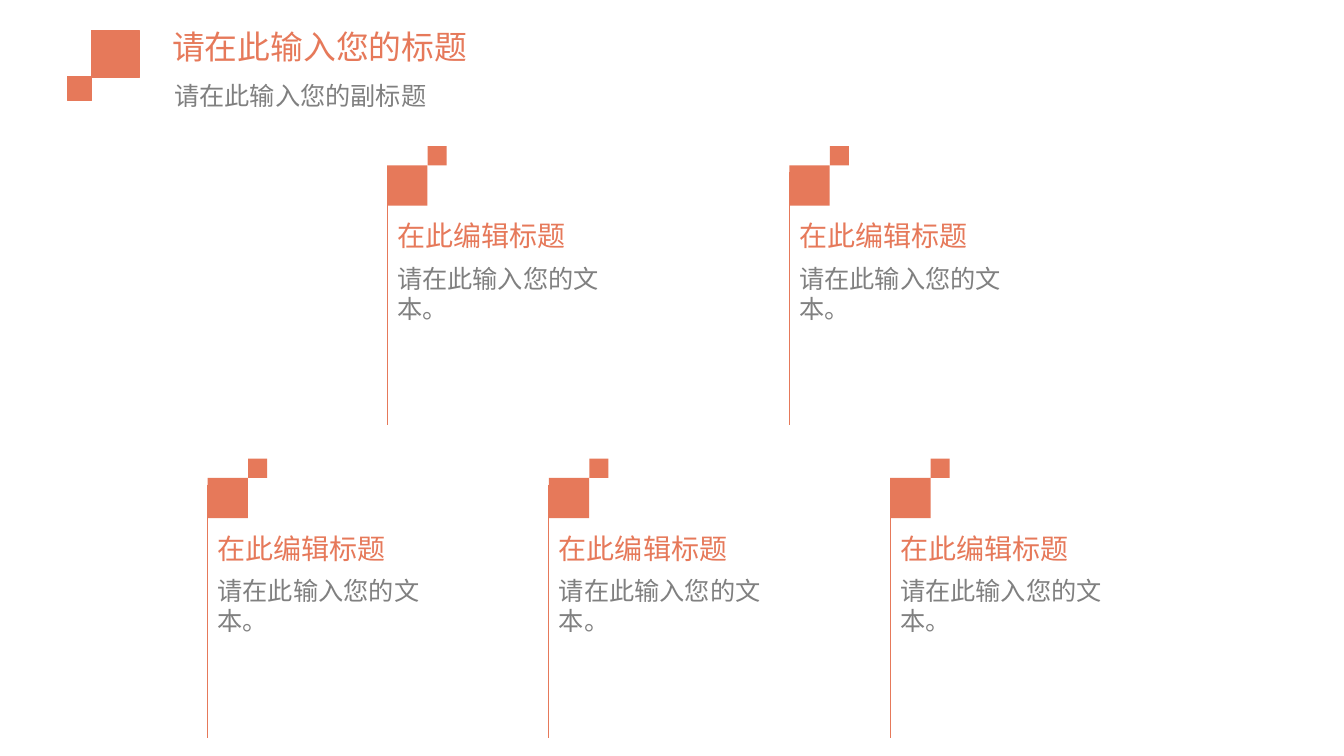
from lxml.etree import SubElement
from pptx import Presentation
from pptx.dml.color import RGBColor
from pptx.enum.shapes import MSO_CONNECTOR, MSO_SHAPE
from pptx.enum.text import MSO_ANCHOR
from pptx.oxml.ns import qn
from pptx.util import Inches, Pt

COLORS = {"accent": "E6795A", "body": "808080", "background": "FFFFFF"}
FONT = "Arial"

# Top-left corner of each row's cards: (top, left positions)
CARD_ROWS = [
    (1.45, [3.84, 7.83]),
    (4.55, [2.06 + 3.385 * column for column in range(3)]),
]


def color(name):
    return RGBColor.from_string(COLORS[name])


def add_square(page, left, top, size, outlined=False):
    square = page.shapes.add_shape(
        MSO_SHAPE.RECTANGLE, Inches(left), Inches(top), Inches(size), Inches(size))
    square.shadow.inherit = False
    square.fill.solid()
    square.fill.fore_color.rgb = color("accent")
    if outlined:
        square.line.color.rgb = color("accent")
        square.line.width = Pt(0.75)
    else:
        square.line.fill.background()


def add_rule(page, left, top, height):
    rule = page.shapes.add_connector(
        MSO_CONNECTOR.STRAIGHT, Inches(left), Inches(top),
        Inches(left), Inches(top + height))
    rule.line.color.rgb = color("accent")
    rule.line.width = Pt(0.75)
    SubElement(rule.element.spPr, qn("a:effectLst"))


def add_text(page, left, top, width, height, text, size, color_name,
             anchor=MSO_ANCHOR.TOP, spacing=None):
    box = page.shapes.add_textbox(
        Inches(left), Inches(top), Inches(width), Inches(height))
    frame = box.text_frame
    frame.word_wrap = True
    frame.vertical_anchor = anchor
    para = frame.paragraphs[0]
    para.text = text
    para.line_spacing = spacing
    para.font.name = FONT
    para.font.size = Pt(size)
    para.font.color.rgb = color(color_name)


def add_header(page):
    add_square(page, 0.91, 0.3, 0.47, outlined=True)
    add_square(page, 0.67, 0.76, 0.24, outlined=True)
    add_text(page, 1.61, 0.14, 9.56, 0.64, "请在此输入您的标题", 23.4, "accent",
             anchor=MSO_ANCHOR.MIDDLE)
    add_text(page, 1.63, 0.78, 9.54, 0.54, "请在此输入您的副标题", 18, "body",
             spacing=0.9)


def add_card(page, left, top):
    add_text(page, left, top + 0.66, 2.44, 0.45, "在此编辑标题", 20, "accent",
             anchor=MSO_ANCHOR.MIDDLE)
    add_text(page, left, top + 1.11, 2.44, 1.65, "请在此输入您的文本。", 18, "body")
    add_rule(page, left, top + 0.26, 2.51)
    add_square(page, left, top + 0.19, 0.4)
    add_square(page, left + 0.4, top, 0.19)


def main():
    deck = Presentation()
    deck.slide_width = Inches(13.33)
    deck.slide_height = Inches(7.5)
    page = deck.slides.add_slide(deck.slide_layouts[6])
    page.background.fill.solid()
    page.background.fill.fore_color.rgb = color("background")

    add_header(page)
    for top, lefts in CARD_ROWS:
        for left in lefts:
            add_card(page, left, top)

    deck.save("out.pptx")


if __name__ == "__main__":
    main()
